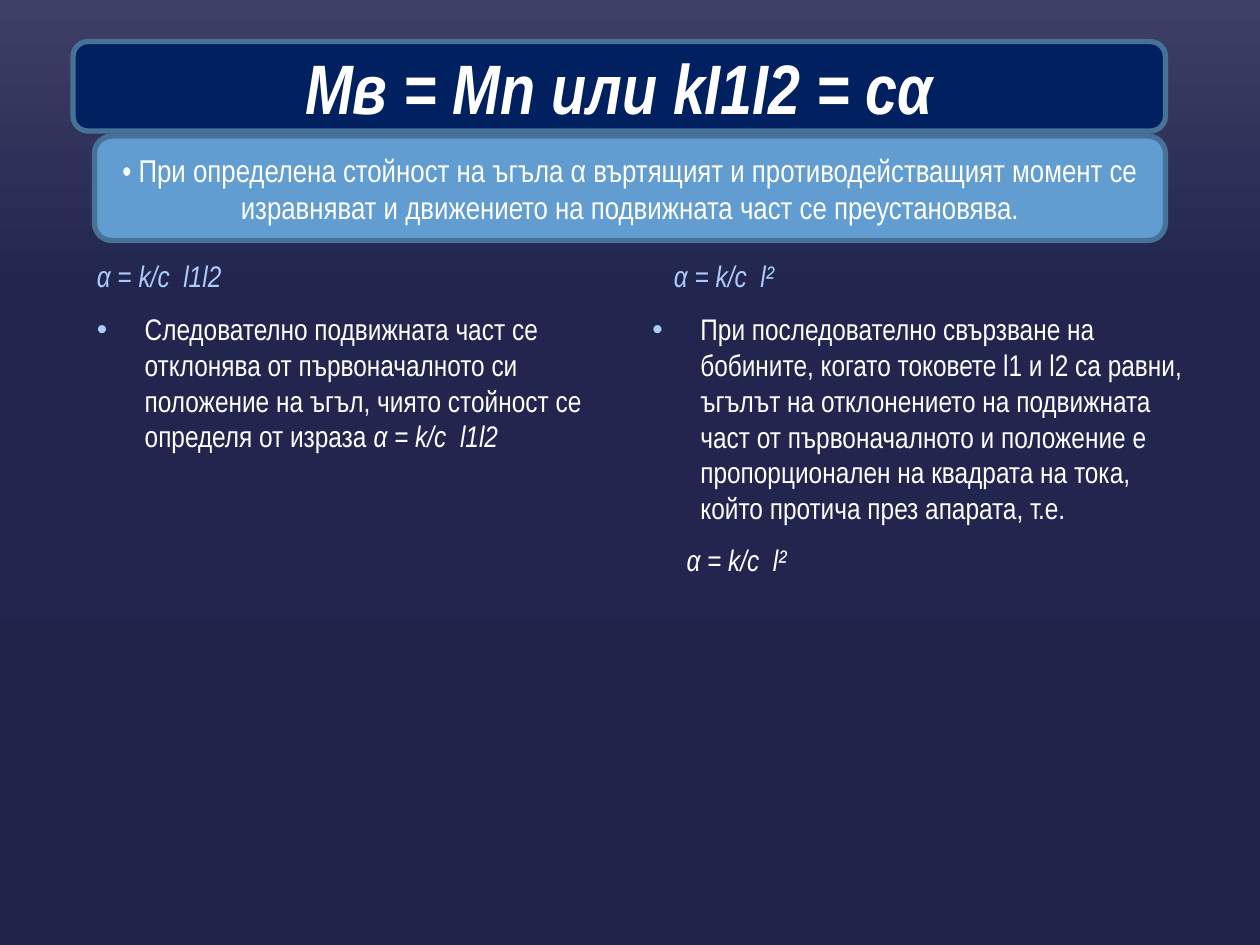
from copy import deepcopy
from dataclasses import dataclass

from lxml import etree
from pptx import Presentation
from pptx.dml.color import RGBColor
from pptx.enum.shapes import MSO_SHAPE
from pptx.enum.text import MSO_ANCHOR, PP_ALIGN
from pptx.oxml.ns import qn
from pptx.util import Inches, Pt

ROUNDED = MSO_SHAPE.ROUNDED_RECTANGLE
TOP, MIDDLE, BOTTOM = MSO_ANCHOR.TOP, MSO_ANCHOR.MIDDLE, MSO_ANCHOR.BOTTOM
LEFT, CENTER = PP_ALIGN.LEFT, PP_ALIGN.CENTER


@dataclass(frozen=True)
class Theme:
    """Colours, font and type sizes of the slide."""
    font: str = "Arial Narrow"
    white: str = "FFFFFF"
    accent: str = "ACCBF9"
    navy: str = "002060"
    blue: str = "629DD1"
    border: str = "477298"
    backdrop: tuple = ((0, "3D3F67"), (0.31, "22264E"), (1, "20244A"))
    title: int = 40
    banner: int = 18
    body: int = 17
    gap: float = 9.4


def add_text(p, text, *, font, size, color, bold=False, italic=False):
    """Append a formatted run to a paragraph."""
    r = p.add_run()
    r.text = text
    r.font.name = font
    r.font.size = Pt(size)
    r.font.bold = bold
    r.font.italic = italic
    r.font.color.rgb = RGBColor.from_string(color)


class SlideBuilder:
    """Holds the theme and the current slide."""

    def __init__(self, s, theme):
        """Store the slide and its theme."""
        self.s, self.theme = s, theme

    def background(self):
        """Fill the background with a vertical gradient."""
        fill = self.s.background.fill
        fill.gradient()
        fill.gradient_angle = 270
        gs_list = fill._fill._gradFill.find(qn("a:gsLst"))
        gs_list.append(deepcopy(gs_list[-1]))
        for stop, (position, color) in zip(fill.gradient_stops, self.theme.backdrop):
            stop.position = position
            stop.color.rgb = RGBColor.from_string(color)

    def panel(self, box, text, fill, size, **fmt):
        """Add a rounded panel with centred text."""
        sp = self.s.shapes.add_shape(ROUNDED, *map(Inches, box))
        sp.shadow.inherit = False
        sp.fill.solid()
        sp.fill.fore_color.rgb = RGBColor.from_string(fill)
        sp.line.color.rgb = RGBColor.from_string(self.theme.border)
        sp.line.width = Pt(3)
        tf = sp.text_frame
        tf.word_wrap = True
        tf.vertical_anchor = MIDDLE
        p = tf.paragraphs[0]
        p.alignment = CENTER
        add_text(p, text, font=self.theme.font, size=size, color=self.theme.white, **fmt)

    def text_box(self, box, anchor=TOP):
        """Add a wrapping text box and return its text frame."""
        tf = self.s.shapes.add_textbox(*map(Inches, box)).text_frame
        tf.word_wrap = True
        tf.vertical_anchor = anchor
        return tf

    def body_text(self, p, text, **fmt):
        """Append body-size text to a paragraph."""
        fmt = {"color": self.theme.white, **fmt}
        add_text(p, text, font=self.theme.font, size=self.theme.body, **fmt)

    def heading(self, box, text):
        """Add a column heading resting on the bottom of its box."""
        p = self.text_box(box, BOTTOM).paragraphs[0]
        p.alignment = LEFT
        self.body_text(p, text, color=self.theme.accent, italic=True)

    def bullet(self, box, text):
        """Add a box with one bulleted paragraph and return its text frame."""
        tf = self.text_box(box)
        p = tf.paragraphs[0]
        p_pr = p._p.get_or_add_pPr()
        p_pr.set("marL", str(Inches(0.38)))
        p_pr.set("indent", str(Inches(-0.38)))
        color = etree.SubElement(p_pr, qn("a:buClr"))
        etree.SubElement(color, qn("a:srgbClr"), val=self.theme.accent)
        etree.SubElement(p_pr, qn("a:buFont"), typeface="Arial")
        etree.SubElement(p_pr, qn("a:buChar"), char="•")
        self.body_text(p, text)
        return tf

    def formula(self, tf, text):
        """Add an indented formula paragraph below the bullet."""
        p = tf.add_paragraph()
        p.space_before = Pt(self.theme.gap)
        p._p.get_or_add_pPr().set("marL", str(Inches(0.27)))
        self.body_text(p, text, italic=True)


def main():
    """Build and save the slide."""
    prs = Presentation()
    prs.slide_width, prs.slide_height = Inches(10), Inches(7.5)
    theme = Theme()
    slide = SlideBuilder(prs.slides.add_slide(prs.slide_layouts[6]), theme)
    product, square = "α = k/c  l1l2", "α = k/c  l²"

    slide.background()
    right = slide.bullet(
        (5.08, 2.42, 4.42, 4.32),
        "При последователно свързване на бобините, когато токовете l1 и l2 са равни, "
        "ъгълът на отклонението на подвижната част от първоначалното и положение е "
        "пропорционален на квадрата на тока, който протича през апарата, т.е.")
    slide.formula(right, square)
    left = slide.bullet(
        (0.67, 2.42, 4.08, 3.83),
        "Следователно подвижната част се отклонява от първоначалното си положение "
        "на ъгъл, чиято стойност се определя от израза ")
    slide.body_text(left.paragraphs[0], product, italic=True)
    for x, text in ((0.67, product), (5.25, square)):
        slide.heading((x, 1.75, 4.08, 0.63), text)
    slide.panel((0.58, 0.33, 8.67, 0.71), "Мв = Мп или kI1I2 = сα",
                theme.navy, theme.title, bold=True, italic=True)
    slide.panel(
        (0.75, 1.08, 8.5, 0.83),
        "• При определена стойност на ъгъла α въртящият и противодействащият момент "
        "се изравняват и движението на подвижната част се преустановява.",
        theme.blue, theme.banner)
    prs.save("out.pptx")


if __name__ == "__main__":
    main()
